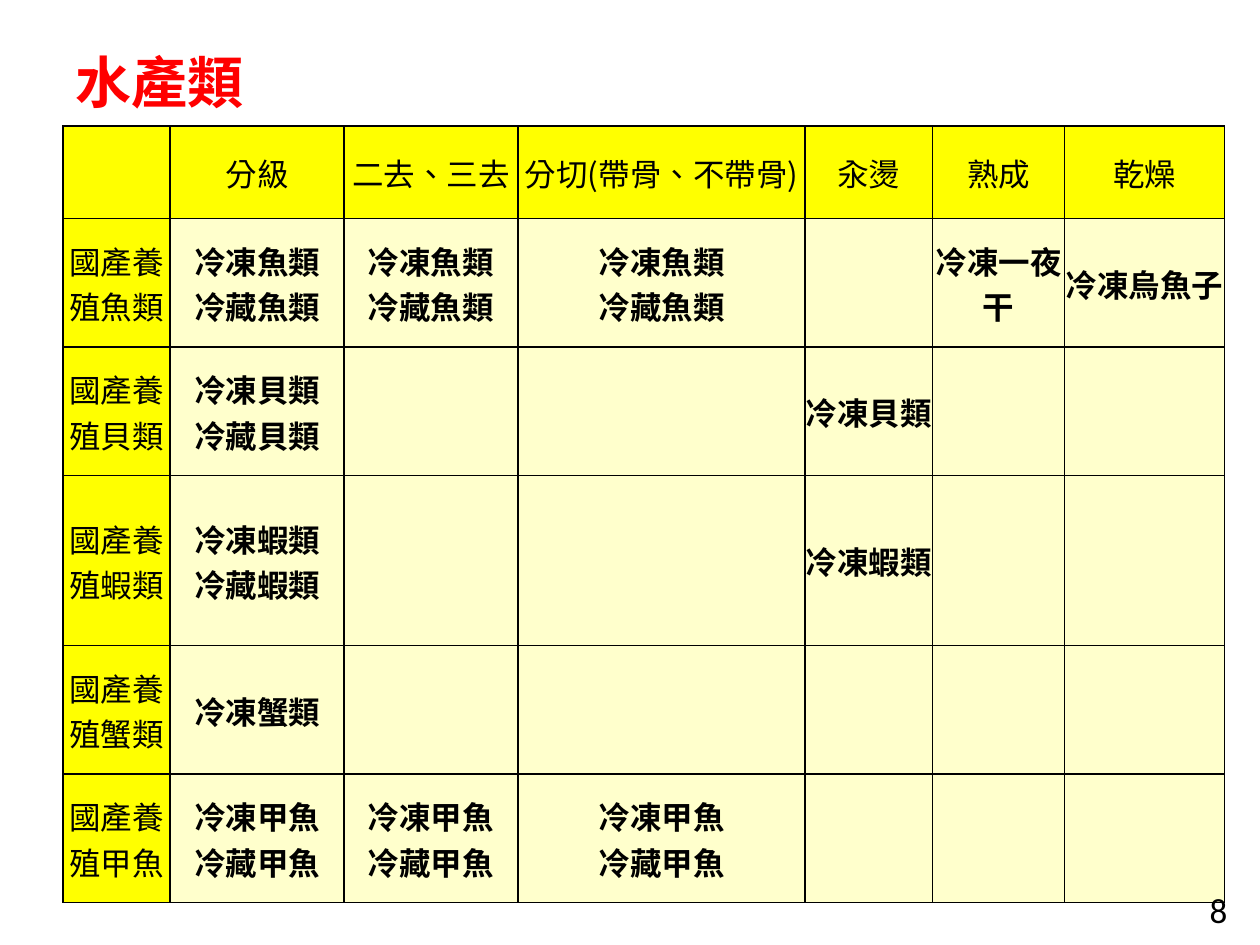
from lxml.etree import SubElement
from pptx import Presentation
from pptx.dml.color import RGBColor
from pptx.enum.lang import MSO_LANGUAGE_ID
from pptx.enum.text import MSO_ANCHOR, PP_ALIGN
from pptx.oxml.ns import qn
from pptx.util import Inches, Pt

RED = RGBColor(0xFF, 0x00, 0x00)
BLACK = RGBColor(0x00, 0x00, 0x00)
YELLOW = RGBColor(0xFF, 0xFF, 0x00)
CREAM = RGBColor(0xFF, 0xFF, 0xCC)
CHINESE_FONT = "Noto Sans CJK SC"

TITLE_FORMAT = {"size": Pt(32), "name": CHINESE_FONT, "bold": True}
LABEL_FORMAT = {"size": Pt(18), "name": CHINESE_FONT, "bold": False}
PRODUCT_FORMAT = {**LABEL_FORMAT, "bold": True}
NUMBER_FORMAT = {"size": Pt(20), "name": "Calibri", "bold": False}
CELL_FORMAT = {
    "vertical_anchor": MSO_ANCHOR.MIDDLE,
    "margin_left": 0,
    "margin_right": 0,
    "margin_top": Inches(0.01),
    "margin_bottom": 0,
}

COLUMN_WIDTHS = [0.85, 1.38, 1.38, 2.28, 1.01, 1.05, 1.27]
ROW_HEIGHTS = [0.49, 1.02, 1.02, 1.35, 1.02, 1.02]
FISH = "冷凍魚類\n冷藏魚類"
TURTLE = "冷凍甲魚\n冷藏甲魚"
PRODUCTS = [
    ["", "分級", "二去、三去", "分切(帶骨、不帶骨)", "汆燙", "熟成", "乾燥"],
    ["國產養殖魚類", FISH, FISH, FISH, "", "冷凍一夜干", "冷凍烏魚子"],
    ["國產養殖貝類", "冷凍貝類\n冷藏貝類", "", "", "冷凍貝類", "", ""],
    ["國產養殖蝦類", "冷凍蝦類\n冷藏蝦類", "", "", "冷凍蝦類", "", ""],
    ["國產養殖蟹類", "冷凍蟹類", "", "", "", "", ""],
    ["國產養殖甲魚", TURTLE, TURTLE, TURTLE, "", "", ""],
]


def apply_format(target, values):
    """Set each named attribute on the target."""
    for name, value in values.items():
        setattr(target, name, value)


def write_text(text_frame, text, font_format, color, alignment):
    """Write one paragraph and format all of its runs."""
    paragraph = text_frame.paragraphs[0]
    paragraph.text = text
    paragraph.alignment = alignment
    for run in paragraph.runs:
        apply_format(run.font, font_format)
        run.font.color.rgb = color
        run.font.language_id = MSO_LANGUAGE_ID.TRADITIONAL_CHINESE
        latin = run.font._element.find(qn("a:latin"))
        east_asian = latin.makeelement(qn("a:ea"), {"typeface": font_format["name"]})
        latin.addnext(east_asian)


def add_borders(cell):
    """Draw a thin black line on all four sides of a cell."""
    properties = cell._tc.get_or_add_tcPr()
    for position, side in enumerate(("a:lnL", "a:lnR", "a:lnT", "a:lnB")):
        line = properties.makeelement(qn(side), {"w": str(Pt(1))})
        properties.insert(position, line)
        fill = SubElement(line, qn("a:solidFill"))
        SubElement(fill, qn("a:srgbClr"), {"val": str(BLACK)})


def place_title(slide, box):
    """Place the red heading in the given box."""
    title = slide.shapes.title
    apply_format(title, dict(zip(("left", "top", "width", "height"), box)))
    title.text_frame.vertical_anchor = MSO_ANCHOR.MIDDLE
    write_text(title.text_frame, "水產類", TITLE_FORMAT, RED, PP_ALIGN.LEFT)


def place_product_table(slide, box):
    """Place the table of products by species and process in the given box."""
    left, top, width, height = box
    table = slide.shapes.add_table(len(ROW_HEIGHTS), len(COLUMN_WIDTHS), *box).table
    for column, share in zip(table.columns, COLUMN_WIDTHS):
        column.width = int(width * share / sum(COLUMN_WIDTHS))
    for row, share in zip(table.rows, ROW_HEIGHTS):
        row.height = int(height * share / sum(ROW_HEIGHTS))
    for row_index, texts in enumerate(PRODUCTS):
        for column_index, text in enumerate(texts):
            cell = table.cell(row_index, column_index)
            is_label = row_index == 0 or column_index == 0
            apply_format(cell, CELL_FORMAT)
            cell.fill.solid()
            cell.fill.fore_color.rgb = YELLOW if is_label else CREAM
            font_format = LABEL_FORMAT if is_label else PRODUCT_FORMAT
            write_text(cell.text_frame, text, font_format, BLACK, PP_ALIGN.CENTER)
            add_borders(cell)


def place_page_number(slide, box):
    """Place the page number in the given box."""
    text_frame = slide.shapes.add_textbox(*box).text_frame
    text_frame.word_wrap = True
    text_frame.vertical_anchor = MSO_ANCHOR.MIDDLE
    write_text(text_frame, "8", NUMBER_FORMAT, BLACK, PP_ALIGN.RIGHT)


def main():
    """Build the slide and save it."""
    presentation = Presentation()
    presentation.slide_width = Inches(10)
    presentation.slide_height = Inches(7.5)
    slide = presentation.slides.add_slide(presentation.slide_layouts[5])
    place_title(slide, [Inches(n) for n in (0.5, 0.3, 8.17, 0.69)])
    place_product_table(slide, [Inches(n) for n in (0.5, 1, 9.22, 5.92)])
    place_page_number(slide, [Inches(n) for n in (9.17, 6.93, 0.67, 0.57)])
    presentation.save("out.pptx")


if __name__ == "__main__":
    main()
